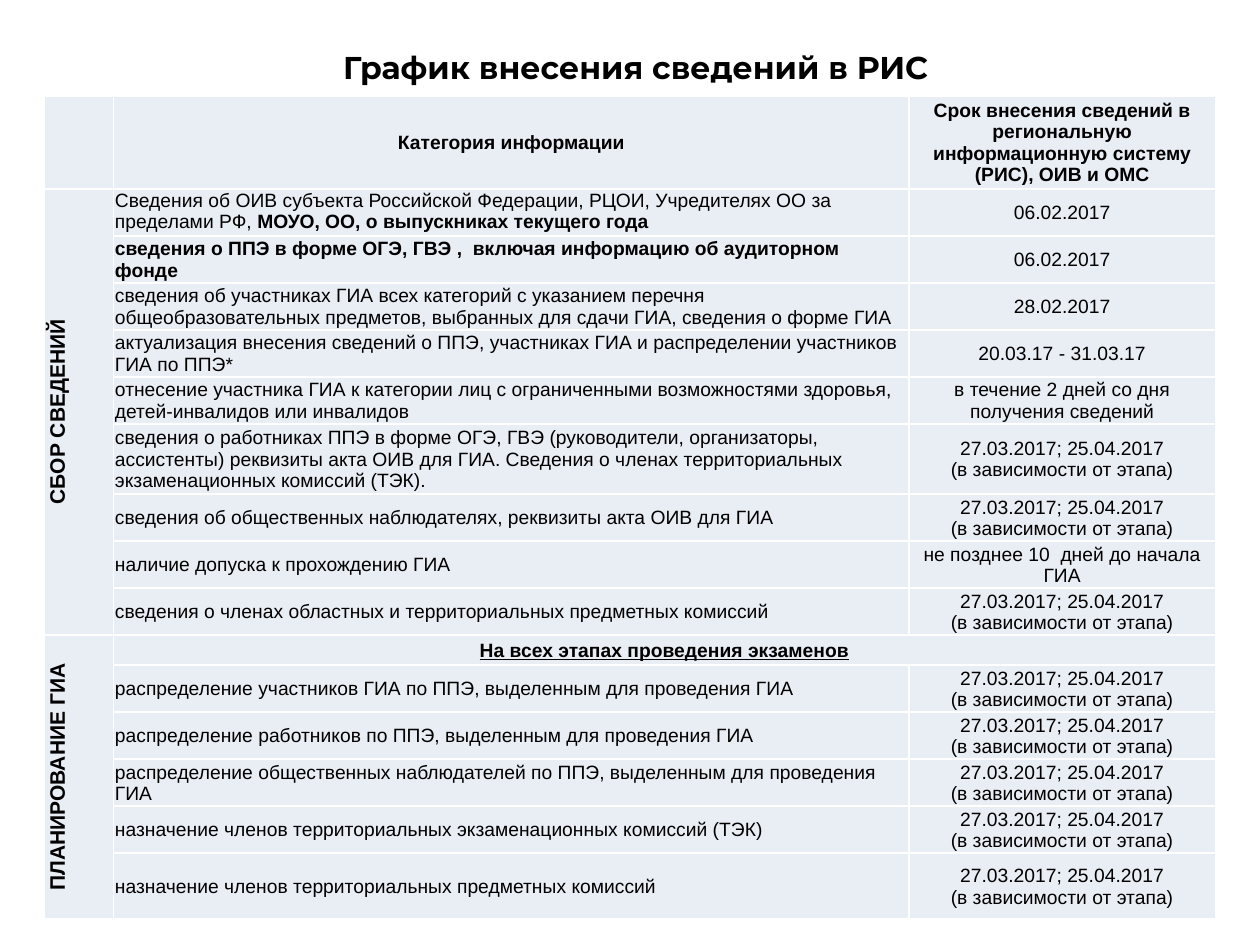
from lxml import etree
from pptx import Presentation
from pptx.dml.color import RGBColor
from pptx.enum.text import MSO_ANCHOR, PP_ALIGN
from pptx.oxml.ns import qn
from pptx.util import Pt

BLACK = RGBColor(0, 0, 0)
WHITE = RGBColor(0xFF, 0xFF, 0xFF)
PALE_BLUE = RGBColor(0xE9, 0xED, 0xF4)
LEFT, CENTER = PP_ALIGN.LEFT, PP_ALIGN.CENTER
TOP, MIDDLE = MSO_ANCHOR.TOP, MSO_ANCHOR.MIDDLE

TWO_STAGES = "27.03.2017; 25.04.2017\n(в зависимости от этапа)"
HEADER = ("Категория информации",
          "Срок внесения сведений в региональную информационную систему (РИС), ОИВ и ОМС")
COLLECTION = [
    ("Сведения об ОИВ субъекта Российской Федерации, РЦОИ, Учредителях ОО за пределами РФ, ",
     "06.02.2017"),
    ("сведения о ППЭ в форме ОГЭ, ГВЭ ,  включая информацию об аудиторном фонде", "06.02.2017"),
    ("сведения об участниках ГИА всех категорий с указанием перечня общеобразовательных "
     "предметов, выбранных для сдачи ГИА, сведения о форме ГИА", "28.02.2017"),
    ("актуализация внесения сведений о ППЭ, участниках ГИА и распределении участников "
     "ГИА по ППЭ*", "20.03.17 - 31.03.17"),
    ("отнесение участника ГИА к категории лиц с ограниченными возможностями здоровья, "
     "детей-инвалидов или инвалидов", "в течение 2 дней со дня получения сведений"),
    ("сведения о работниках ППЭ в форме ОГЭ, ГВЭ (руководители, организаторы, ассистенты) "
     "реквизиты акта ОИВ для ГИА. Сведения о членах территориальных экзаменационных "
     "комиссий (ТЭК).", TWO_STAGES),
    ("сведения об общественных наблюдателях, реквизиты акта ОИВ для ГИА", TWO_STAGES),
    ("наличие допуска к прохождению ГИА", "не позднее 10  дней до начала ГИА"),
    ("сведения о членах областных и территориальных предметных комиссий", TWO_STAGES),
]
PLANNING = [
    ("распределение участников ГИА по ППЭ, выделенным для проведения ГИА", TWO_STAGES),
    ("распределение работников по ППЭ, выделенным для проведения ГИА", TWO_STAGES),
    ("распределение общественных наблюдателей по ППЭ, выделенным для проведения ГИА", TWO_STAGES),
    ("назначение членов территориальных экзаменационных комиссий (ТЭК)", TWO_STAGES),
    ("назначение членов территориальных предметных комиссий", TWO_STAGES),
]
SUBHEAD_ROW = 1 + len(COLLECTION)
ROW_COUNT = SUBHEAD_ROW + 1 + len(PLANNING)
COL_WIDTHS = (39.5, 454.5, 175)
ROW_HEIGHT = 26.9
SPECIAL_HEIGHTS = {0: 53.1, 6: 40, SUBHEAD_ROW: 17.1, ROW_COUNT - 1: 37.8}


class Deck:
    body_font, title_font = "Arial", "Montserrat"

    def __init__(self, width, height):
        self.prs = Presentation()
        self.prs.slide_width, self.prs.slide_height = Pt(width), Pt(height)
        self.s = self.prs.slides.add_slide(self.prs.slide_layouts[5])

    def fill_text(self, p, text, font=None, size=11, bold=False, underline=False, align=LEFT):
        p.text, p.alignment = text, align
        for r in p.runs:
            self.style(r.font, font or self.body_font, size, bold, underline)

    def style(self, f, name, size, bold, underline=False):
        f.name, f.size, f.bold, f.underline = name, Pt(size), bold, underline
        f.color.rgb = BLACK

    def title(self, text, left, top, width, height):
        sp = self.s.shapes.title
        sp.left, sp.top, sp.width, sp.height = Pt(left), Pt(top), Pt(width), Pt(height)
        tf = sp.text_frame
        tf.word_wrap, tf.vertical_anchor = True, TOP
        self.fill_text(tf.paragraphs[0], text, font=self.title_font, size=18, bold=True,
                       align=CENTER)

    def table(self, left, top, widths, heights):
        frame = self.s.shapes.add_table(len(heights), len(widths), Pt(left), Pt(top),
                                        Pt(sum(widths)), Pt(sum(heights)))
        table = frame.table
        table.first_row = table.horz_banding = False
        for col, width in zip(table.columns, widths):
            col.width = Pt(width)
        for row, height in zip(table.rows, heights):
            row.height = Pt(height)
        for cell in table.iter_cells():
            self.borders(cell)
            cell.fill.solid()
            cell.fill.fore_color.rgb = PALE_BLUE
            cell.margin_left = cell.margin_right = cell.margin_top = Pt(0.7)
            cell.margin_bottom = 0
            cell.vertical_anchor = MIDDLE
            cell.text_frame.paragraphs[0].font.size = Pt(11)
        return table

    def borders(self, cell):
        for side in ("a:lnL", "a:lnR", "a:lnT", "a:lnB"):
            ln = etree.SubElement(cell._tc.get_or_add_tcPr(), qn(side), w=str(Pt(1)))
            fill = etree.SubElement(ln, qn("a:solidFill"))
            etree.SubElement(fill, qn("a:srgbClr"), val=str(WHITE))

    def cell(self, cell, text, **fmt):
        self.fill_text(cell.text_frame.paragraphs[0], text, **fmt)

    def side_label(self, first, last, text):
        """Merge a column of cells and turn its heading upwards."""
        first.merge(last)
        first._tc.get_or_add_tcPr().set("vert", "vert270")
        self.cell(first, text, size=12, bold=True, align=CENTER)


def main():
    deck = Deck(720, 540)
    deck.title("График внесения сведений в РИС", 65.5, 24, 595.5, 29)
    heights = [SPECIAL_HEIGHTS.get(i, ROW_HEIGHT) for i in range(ROW_COUNT)]
    table = deck.table(25.5, 54.8, COL_WIDTHS, heights)

    for col, text in enumerate(HEADER, 1):
        deck.cell(table.cell(0, col), text, bold=True, align=CENTER)
    for start, entries in ((1, COLLECTION), (SUBHEAD_ROW + 1, PLANNING)):
        for row, (category, deadline) in enumerate(entries, start):
            deck.cell(table.cell(row, 1), category, bold=row == 2)
            deck.cell(table.cell(row, 2), deadline, align=CENTER)

    first_entry = table.cell(1, 1)
    first_entry.vertical_anchor = TOP
    r = first_entry.text_frame.paragraphs[0].add_run()
    r.text = "МОУО, ОО, о выпускниках текущего года"
    deck.style(r.font, deck.body_font, 11, True)

    subhead = table.cell(SUBHEAD_ROW, 1)
    subhead.merge(table.cell(SUBHEAD_ROW, 2))
    deck.cell(subhead, "На всех этапах проведения экзаменов",
              bold=True, underline=True, align=CENTER)
    deck.side_label(table.cell(1, 0), table.cell(SUBHEAD_ROW - 1, 0), "СБОР СВЕДЕНИЙ")
    deck.side_label(table.cell(SUBHEAD_ROW, 0), table.cell(ROW_COUNT - 1, 0), "ПЛАНИРОВАНИЕ ГИА")
    deck.prs.save("out.pptx")


if __name__ == "__main__":
    main()
